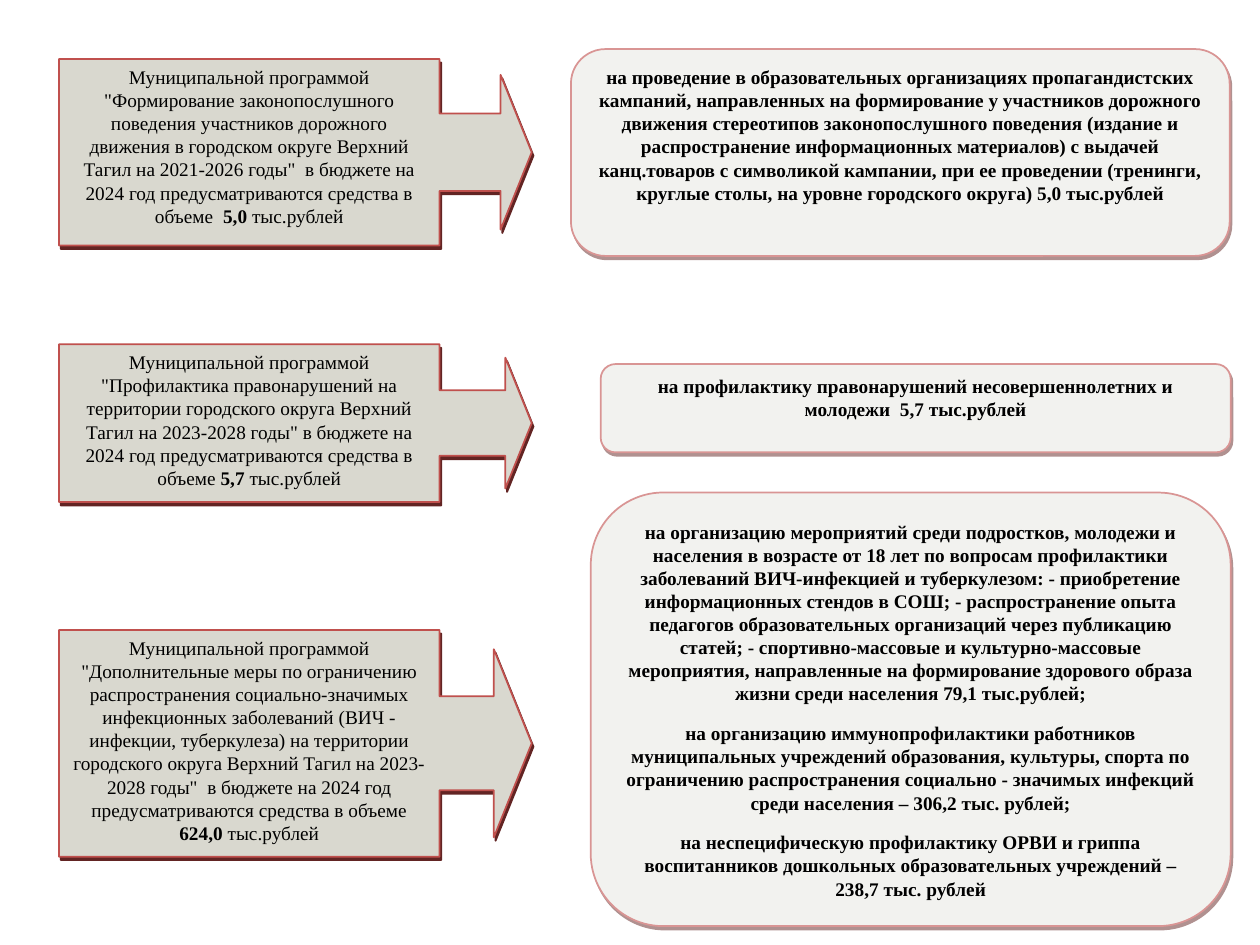
from dataclasses import dataclass

from lxml.etree import SubElement
from pptx import Presentation
from pptx.dml.color import RGBColor
from pptx.enum.shapes import MSO_SHAPE
from pptx.enum.text import MSO_ANCHOR, PP_ALIGN
from pptx.oxml.ns import qn
from pptx.util import Cm, Pt


@dataclass(frozen=True)
class Theme:
    font: str = "Times New Roman"
    size: float = 11
    gap: float = 9.5
    ink: str = "000000"
    call_fill: str = "D9D8CF"
    call_line: str = "C0504D"
    goal_fill: str = "F2F2EF"
    goal_line: str = "D99594"
    shade: str = "622423"


THEME = Theme()

# Each row: callout (top, height), callout paragraphs as (text, bold) runs,
# goal box (left, top, width, height), goal paragraphs. Lengths in cm.
ROWS = [
    ((1.19, 3.76),
     [[("Муниципальной программой \"Формирование законопослушного поведения "
        "участников дорожного движения в городском округе Верхний Тагил на "
        "2021-2026 годы\"  в бюджете на 2024 год предусматриваются средства "
        "в объеме  ", False), ("5,0 ", True), ("тыс.рублей", False)]],
     (11.51, 0.99, 13.28, 4.17),
     ["на проведение в образовательных организациях пропагандистских кампаний, "
      "направленных на формирование у участников дорожного движения стереотипов "
      "законопослушного поведения (издание и распространение информационных "
      "материалов) с выдачей канц.товаров с символикой кампании, при ее "
      "проведении (тренинги, круглые столы, на уровне городского округа) "
      "5,0 тыс.рублей"]),
    ((6.94, 3.18),
     [[("Муниципальной программой \"Профилактика правонарушений на территории "
        "городского округа Верхний Тагил на 2023-2028 годы\" в бюджете на 2024 "
        "год предусматриваются средства в объеме ", False),
       ("5,7 ", True), ("тыс.рублей", False)]],
     (12.11, 7.34, 12.7, 1.78),
     ["на профилактику правонарушений несовершеннолетних и молодежи  "
      "5,7 тыс.рублей"]),
    ((12.7, 4.57),
     [[("Муниципальной программой \"Дополнительные меры по ограничению "
        "распространения социально-значимых инфекционных заболеваний (ВИЧ - "
        "инфекции, туберкулеза) на территории городского округа Верхний Тагил "
        "на 2023-2028 годы\"  в бюджете на 2024 год предусматриваются средства "
        "в объеме", False)],
      [("624,0 ", True), ("тыс.рублей", False)]],
     (11.91, 9.93, 12.9, 8.74),
     ["на организацию мероприятий среди подростков, молодежи и населения в "
      "возрасте от 18 лет по вопросам профилактики заболеваний ВИЧ-инфекцией и "
      "туберкулезом: - приобретение информационных стендов в СОШ; - "
      "распространение опыта педагогов образовательных организаций через "
      "публикацию статей; - спортивно-массовые и культурно-массовые "
      "мероприятия, направленные на формирование здорового образа жизни среди "
      "населения 79,1 тыс.рублей;",
      "на организацию иммунопрофилактики работников муниципальных учреждений "
      "образования, культуры, спорта по ограничению распространения социально - "
      "значимых инфекций среди населения – 306,2 тыс. рублей;",
      "на неспецифическую профилактику ОРВИ и гриппа воспитанников дошкольных "
      "образовательных учреждений – 238,7 тыс. рублей"]),
]


def cast(shape, alpha):
    """Give the shape a hard shadow, with alpha in percent."""
    shape.shadow.inherit = False
    effects = shape._element.spPr.find(qn("a:effectLst"))
    outer = SubElement(effects, qn("a:outerShdw"), dist=str(Pt(2.2)),
                       dir=str(63 * 60000), algn="ctr", rotWithShape="0")
    color = SubElement(outer, qn("a:srgbClr"), val=THEME.shade)
    SubElement(color, qn("a:alpha"), val=str(alpha * 1000))


def panel(slide, kind, box, adjust, fill, line, alpha):
    """Add a filled, outlined shape and return it."""
    shape = slide.shapes.add_shape(kind, *map(Cm, box))
    for i, value in enumerate(adjust):
        shape.adjustments[i] = value
    shape.fill.solid()
    shape.fill.fore_color.rgb = RGBColor.from_string(fill)
    shape.line.color.rgb = RGBColor.from_string(line)
    shape.line.width = Pt(1)
    cast(shape, alpha)
    return shape


def write(shape, paras, gap=0):
    """Fill the shape with paragraphs, each a list of (text, bold) runs."""
    frame = shape.text_frame
    frame.word_wrap = True
    frame.vertical_anchor = MSO_ANCHOR.TOP
    for i, runs in enumerate(paras):
        para = frame.add_paragraph() if i else frame.paragraphs[0]
        para.alignment = PP_ALIGN.CENTER
        para.space_before = Pt(gap if i else 0)
        para.font.name = THEME.font
        para.font.size = Pt(THEME.size)
        para.font.color.rgb = RGBColor.from_string(THEME.ink)
        for text, bold in runs:
            run = para.add_run()
            run.text = text
            run.font.bold = bold


def callout(slide, box, paras):
    shape = panel(slide, MSO_SHAPE.RIGHT_ARROW_CALLOUT, box,
                  (0.415, 0.415, 0.167, 0.805),
                  THEME.call_fill, THEME.call_line, 100)
    write(shape, paras)


def goal(slide, box, texts):
    shape = panel(slide, MSO_SHAPE.ROUNDED_RECTANGLE, box, (0.167,),
                  THEME.goal_fill, THEME.goal_line, 50)
    write(shape, [[(text, True)] for text in texts], THEME.gap)


def main():
    deck = Presentation()
    deck.slide_width, deck.slide_height = Cm(25.4), Cm(19.05)
    slide = deck.slides.add_slide(deck.slide_layouts[6])
    for (top, height), paras, box, texts in ROWS:
        callout(slide, (1.19, top, 9.53, height), paras)
        goal(slide, box, texts)
    deck.save("out.pptx")


if __name__ == "__main__":
    main()
